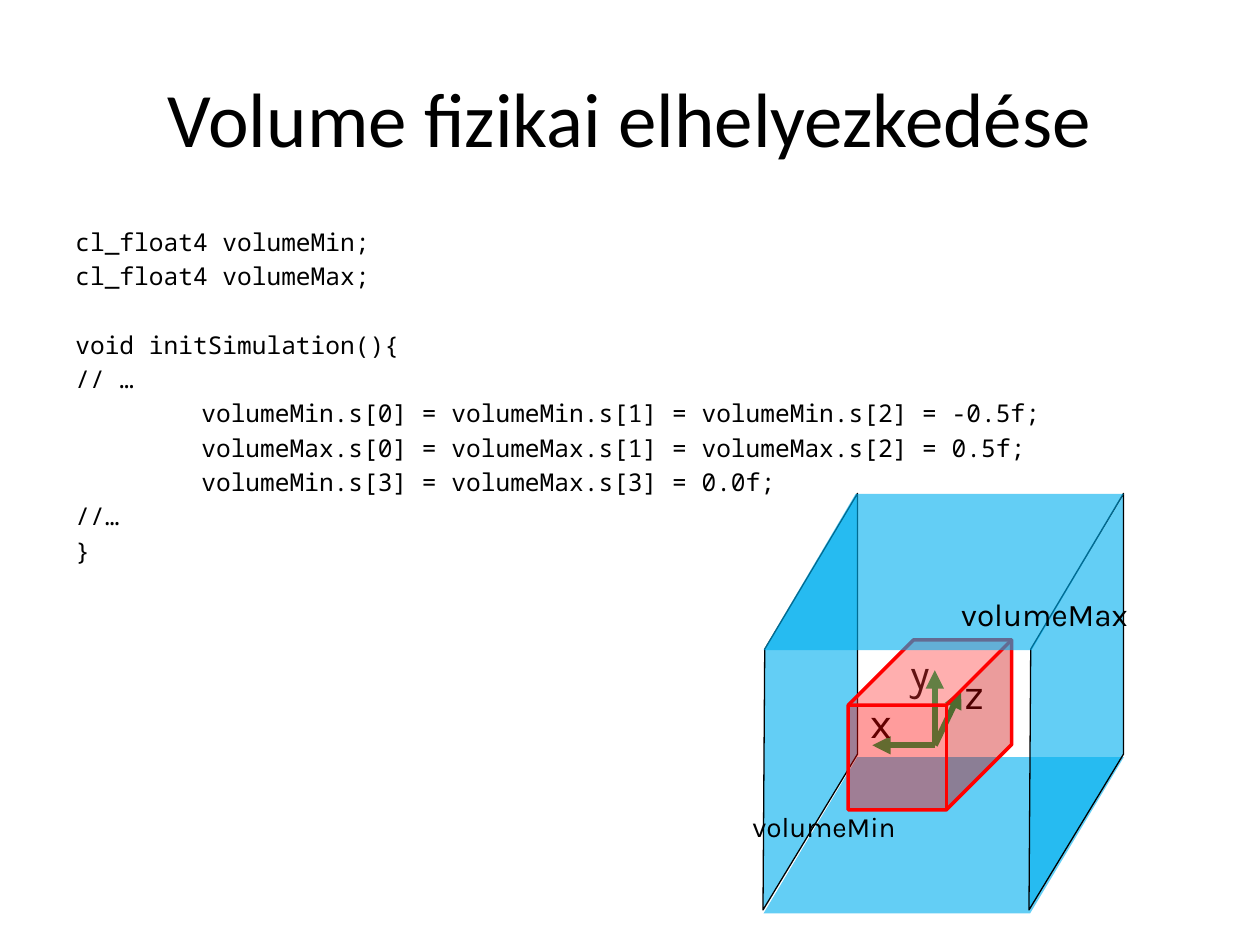
from pptx import Presentation
from pptx import util as u
from pptx.dml import color
from pptx.enum import shapes, text
from pptx.oxml import ns, xmlchemy

Pt = u.Pt
COLORS = {"ink": "000000", "box": "00B0F0", "axis": "00B050", "volume": "FF0000"}


def add_text(content, left, top, width, height, size, font="Karla",
             align=text.PP_ALIGN.CENTER, anchor=text.MSO_ANCHOR.TOP, gap=0, gaps=None):
    frame = slide.shapes.add_textbox(Pt(left), Pt(top), Pt(width), Pt(height)).text_frame
    frame.word_wrap = True
    frame.vertical_anchor = anchor
    for index, line in enumerate(content.split("\n")):
        paragraph = frame.paragraphs[0] if index == 0 else frame.add_paragraph()
        paragraph.alignment = align
        paragraph.space_before = Pt((gaps or {}).get(index, gap))
        if line.startswith("\t"):
            tabs = xmlchemy.OxmlElement("a:tabLst")
            tab = xmlchemy.OxmlElement("a:tab")
            tab.set("pos", str(Pt(72)))
            tab.set("algn", "l")
            tabs.append(tab)
            paragraph._p.get_or_add_pPr().append(tabs)
        run = paragraph.add_run()
        run.text = line
        run.font.name = font
        run.font.size = Pt(size)
        run.font.color.rgb = color.RGBColor.from_string(COLORS["ink"])


def paint(shape, fill, opacity, line=None, width=0):
    shape.shadow.inherit = False
    shape.fill.solid()
    shape.fill.fore_color.rgb = color.RGBColor.from_string(COLORS[fill])
    alpha = xmlchemy.OxmlElement("a:alpha")
    alpha.set("val", str(opacity * 1000))
    shape.fill._xPr.find(".//" + ns.qn("a:srgbClr")).append(alpha)
    if line:
        shape.line.color.rgb = color.RGBColor.from_string(COLORS[line])
        shape.line.width = Pt(width)
    else:
        shape.line.fill.background()


presentation = Presentation()
presentation.slide_width = Pt(720)
presentation.slide_height = Pt(540)
slide = presentation.slides.add_slide(presentation.slide_layouts[6])

add_text("Volume fizikai elhelyezkedése", 36, 21.6, 648, 90, 44, font="Calibri",
         anchor=text.MSO_ANCHOR.MIDDLE)

code = """cl_float4 volumeMin;
cl_float4 volumeMax;
void initSimulation(){
// …
\tvolumeMin.s[0] = volumeMin.s[1] = volumeMin.s[2] = -0.5f;
\tvolumeMax.s[0] = volumeMax.s[1] = volumeMax.s[2] = 0.5f;
\tvolumeMin.s[3] = volumeMax.s[3] = 0.0f;
//…
}"""
add_text(code, 36, 126, 648, 399, 14, font="Noto Sans Mono",
         align=text.PP_ALIGN.LEFT, gap=2.8, gaps={0: 0.5, 2: 22.4})

origin = (534.2, 425.9)
arrows = []
for tip in [(549.2, 394.4), (534.2, 383), (498.5, 425.9)]:
    arrow = slide.shapes.add_connector(
        shapes.MSO_CONNECTOR.STRAIGHT, *[Pt(value) for value in origin + tip])
    arrow.line.color.rgb = color.RGBColor.from_string(COLORS["axis"])
    arrow.line.width = Pt(3.5)
    tail = xmlchemy.OxmlElement("a:tailEnd")
    tail.set("type", "triangle")
    arrow.line._get_or_add_ln().append(tail)
    arrow._element.spPr.append(xmlchemy.OxmlElement("a:effectLst"))
    arrows.append(arrow)

box_left, box_top, box_width, face_height = 436.3, 282.2, 205.9, 89.3

floor = slide.shapes.add_shape(shapes.MSO_SHAPE.PARALLELOGRAM, Pt(box_left), Pt(432.7),
                               Pt(box_width), Pt(face_height))
floor.adjustments[0] = 0.6
paint(floor, "box", 61)

for shift in (0, 151.8):
    corners = [(437, 370.8), (436.4, 520.4), (490.3, 431), (490.2, 282.2)]
    corners = [(x + shift, y) for x, y in corners]
    builder = slide.shapes.build_freeform(*corners[0], scale=Pt(1))
    builder.add_line_segments(corners[1:], close=True)
    paint(builder.convert_to_shape(), "box", 61, "ink", 0.75)

for arrow in arrows[1:]:
    slide.shapes._spTree.append(arrow._element)

for label, left, top, width in [("x", 490.3, 394.6, 23), ("y", 513.4, 366.5, 23),
                                ("z", 522, 378, 69.8)]:
    add_text(label, left, top, width, 25.2, 24)

cube = slide.shapes.add_shape(shapes.MSO_SHAPE.CUBE, Pt(484.7), Pt(365.6), Pt(93.4), Pt(97.2))
cube.adjustments[0] = 0.4
paint(cube, "volume", 39, "volume", 2)

roof = slide.shapes.add_shape(shapes.MSO_SHAPE.PARALLELOGRAM, Pt(box_left), Pt(box_top),
                              Pt(box_width), Pt(face_height))
roof.adjustments[0] = 0.59
paint(roof, "box", 61)

add_text("volumeMax", 522, 336.5, 149.8, 28.8, 18)
add_text("volumeMin", 383, 459, 175.7, 26.6, 16)

presentation.save("out.pptx")
